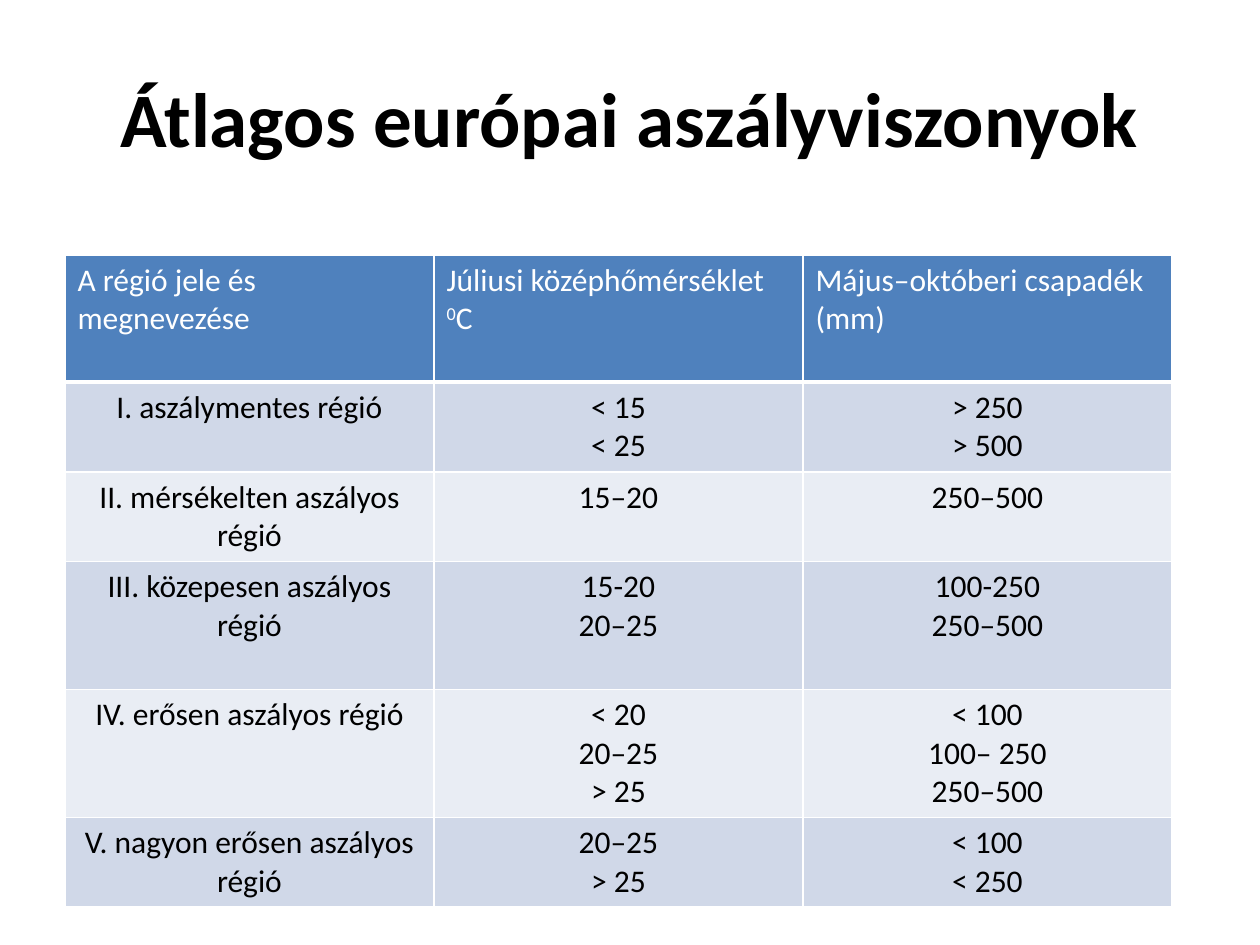
from dataclasses import dataclass

from lxml import etree
from pptx import Presentation
from pptx.dml.color import RGBColor
from pptx.enum.text import MSO_ANCHOR, PP_ALIGN
from pptx.oxml.ns import qn
from pptx.util import Pt

LEFT, CENTER = PP_ALIGN.LEFT, PP_ALIGN.CENTER
MIDDLE = MSO_ANCHOR.MIDDLE
EMU_PER_PX = 914400 // 126

FONT = "Calibri"
WHITE, BLACK = "FFFFFF", "000000"
HEADER_FILL = "4F81BD"
BAND_FILLS = ("D0D8E8", "E9EDF4")
SUPERSCRIPT = "^"  # the character after this mark is raised


@dataclass
class TableRow:
    height: int
    cells: tuple[str, str, str]


HEADER = TableRow(127, ("A régió jele és megnevezése",
                        "Júliusi középhőmérséklet\n^0C",
                        "Május–októberi csapadék\n(mm)"))
REGIONS = [
    TableRow(90, ("I. aszálymentes régió", "< 15\n< 25", "> 250\n> 500")),
    TableRow(89, ("II. mérsékelten aszályos régió", "15–20", "250–500")),
    TableRow(128, ("III. közepesen aszályos régió", "15-20\n20–25",
                   "100-250\n250–500")),
    TableRow(128, ("IV. erősen aszályos régió", "< 20\n20–25\n> 25",
                   "< 100\n100– 250\n250–500")),
    TableRow(89, ("V. nagyon erősen aszályos régió", "20–25\n> 25",
                  "< 100\n< 250")),
]
COLUMN_WIDTH = 369


def px(length: int) -> int:
    return length * EMU_PER_PX


def color(hex_value: str) -> RGBColor:
    return RGBColor.from_string(hex_value)


def write_text(frame, text: str, *, size: int = 18, ink: str = BLACK,
               bold: bool = False, align=LEFT) -> None:
    """Write one paragraph per line of text."""
    frame.word_wrap = True
    for index, line in enumerate(text.split("\n")):
        paragraph = frame.add_paragraph() if index else frame.paragraphs[0]
        paragraph.alignment = align
        before, mark, after = line.partition(SUPERSCRIPT)
        pieces = [(before, False), (after[:1], bool(mark)), (after[1:], False)]
        for words, raised in pieces:
            if not words:
                continue
            run = paragraph.add_run()
            run.text = words
            run.font.name = FONT
            run.font.size = Pt(size)
            run.font.bold = bold
            run.font.color.rgb = color(ink)
            if raised:
                run._r.get_or_add_rPr().set("baseline", "30000")


def set_borders(cell, bottom: int, top: int) -> None:
    """Draw white borders, with widths in points."""
    properties = cell._tc.get_or_add_tcPr()
    for side, width in (("L", 1), ("R", 1), ("T", top), ("B", bottom)):
        line = etree.SubElement(properties, qn(f"a:ln{side}"), w=str(Pt(width)))
        fill = etree.SubElement(line, qn("a:solidFill"))
        etree.SubElement(fill, qn("a:srgbClr"), val=WHITE)


def add_title(slide, text: str) -> None:
    title = slide.shapes.add_textbox(px(63), px(38), px(1134), px(157))
    title.text_frame.vertical_anchor = MIDDLE
    write_text(title.text_frame, text, size=44, bold=True, align=CENTER)


def add_region_table(slide, rows: list[TableRow]) -> None:
    columns = len(HEADER.cells)
    table = slide.shapes.add_table(
        len(rows), columns, px(65), px(255), px(COLUMN_WIDTH * columns),
        px(sum(row.height for row in rows))).table
    for column in table.columns:
        column.width = px(COLUMN_WIDTH)
    for row_index, row in enumerate(rows):
        table.rows[row_index].height = px(row.height)
        is_header = row_index == 0
        fill = HEADER_FILL if is_header else BAND_FILLS[(row_index - 1) % 2]
        for column_index, text in enumerate(row.cells):
            cell = table.cell(row_index, column_index)
            set_borders(cell, bottom=3 if is_header else 1,
                        top=3 if row_index == 1 else 1)
            cell.fill.solid()
            cell.fill.fore_color.rgb = color(fill)
            write_text(cell.text_frame, text,
                       ink=WHITE if is_header else BLACK,
                       align=LEFT if is_header else CENTER)


def main() -> None:
    presentation = Presentation()
    presentation.slide_width, presentation.slide_height = px(1260), px(945)
    slide = presentation.slides.add_slide(presentation.slide_layouts[6])
    # Region table, then title
    add_region_table(slide, [HEADER, *REGIONS])
    add_title(slide, "Átlagos európai aszályviszonyok")
    presentation.save("out.pptx")


if __name__ == "__main__":
    main()
